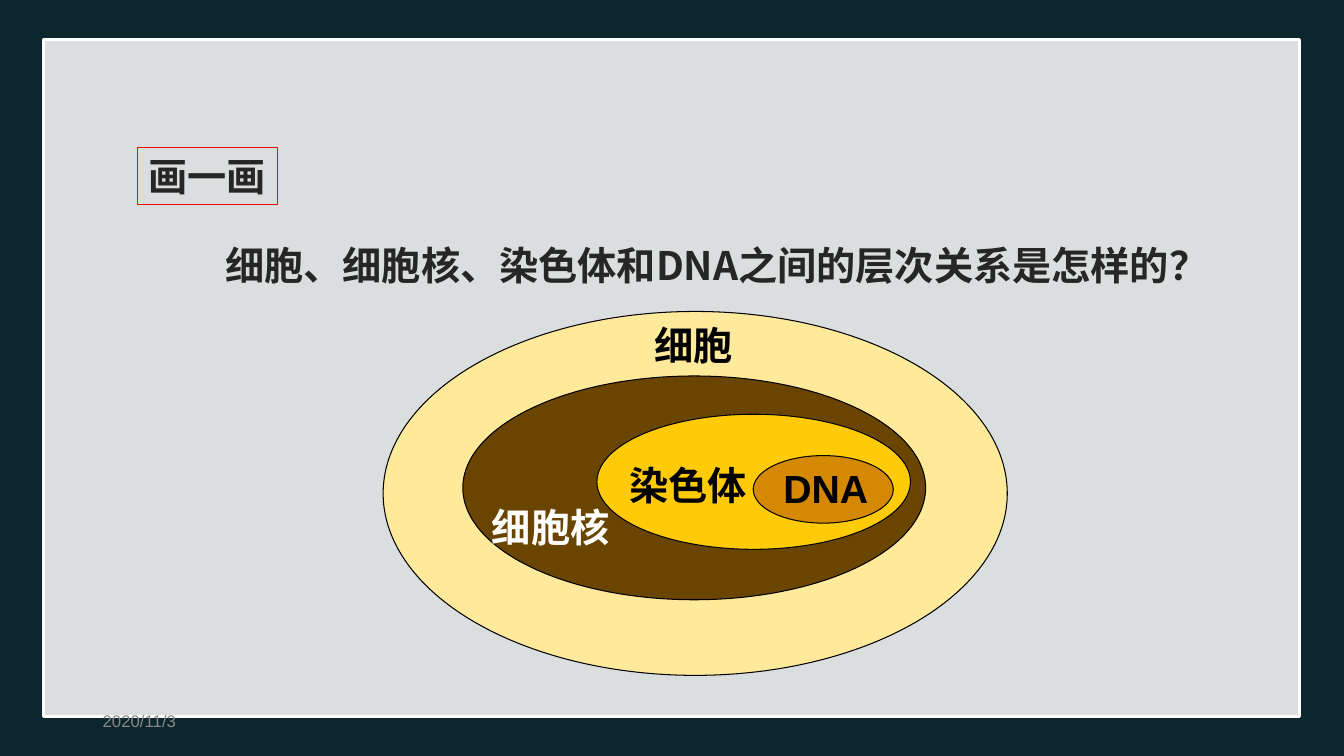
from dataclasses import dataclass

from lxml import etree
from pptx import Presentation
from pptx import util as u
from pptx.dml.color import RGBColor
from pptx.enum import shapes, text
from pptx.oxml.ns import qn

PX = 9144  # EMU in one px, 100 px to the inch

NAVY = RGBColor(0x0C, 0x26, 0x2D)
WHITE = RGBColor(0xFF, 0xFF, 0xFF)
BLACK = RGBColor(0x00, 0x00, 0x00)
RED = RGBColor(0xFF, 0x00, 0x00)
GREY = RGBColor(0x89, 0x89, 0x89)
CHARCOAL = RGBColor(0x26, 0x26, 0x26)
CREAM = RGBColor(0xFF, 0xEA, 0x9C)
BROWN = RGBColor(0x6A, 0x45, 0x00)
YELLOW = RGBColor(0xFF, 0xCA, 0x08)
ORANGE = RGBColor(0xD4, 0x89, 0x00)

LATIN_FONT = "Arial"
CHINESE_FONT = "Noto Sans CJK SC"


@dataclass(frozen=True)
class Box:
    left: int
    top: int
    width: int
    height: int

    def emu(self) -> tuple[int, int, int, int]:
        return (self.left * PX, self.top * PX, self.width * PX, self.height * PX)


@dataclass(frozen=True)
class Layer:
    """One level of the nested diagram: its ellipse and its label."""
    name: str
    ellipse: Box
    fill: RGBColor
    label: Box
    label_color: RGBColor = BLACK


LAYERS = [
    Layer("细胞", Box(380, 309, 619, 361), CREAM, Box(639, 314, 99, 57)),
    Layer("细胞核", Box(459, 373, 459, 222), BROWN, Box(478, 494, 139, 57), WHITE),
    Layer("染色体", Box(592, 411, 311, 134), YELLOW, Box(614, 453, 139, 57)),
    Layer("DNA", Box(747, 452, 139, 67), ORANGE, Box(767, 456, 105, 57)),
]


def add_figure(slide, kind, box: Box, fill: RGBColor, line: RGBColor, weight: float):
    shape = slide.shapes.add_shape(kind, *box.emu())
    shape.shadow.inherit = False
    shape.fill.solid()
    shape.fill.fore_color.rgb = fill
    shape.line.color.rgb = line
    shape.line.width = u.Pt(weight)
    return shape


def add_text(slide, content: str, box: Box, *, size: int = 28, bold: bool = True,
             color: RGBColor = BLACK, font: str = LATIN_FONT, wrap: bool = False,
             align=text.PP_ALIGN.LEFT, anchor=text.MSO_ANCHOR.TOP):
    shape = slide.shapes.add_textbox(*box.emu())
    frame = shape.text_frame
    frame.word_wrap = wrap
    frame.vertical_anchor = anchor
    paragraph = frame.paragraphs[0]
    paragraph.alignment = align
    run = paragraph.add_run()
    run.text = content
    run.font.size = u.Pt(size)
    run.font.bold = bold
    run.font.color.rgb = color
    run.font.name = font
    etree.SubElement(run.font._element, qn("a:ea"), typeface=CHINESE_FONT)
    return shape


def add_panel(slide) -> None:
    panel = add_figure(slide, shapes.MSO_SHAPE.RECTANGLE, Box(43, 39, 1246, 672),
                       WHITE, WHITE, 2)
    color = panel.fill._xPr.find(qn("a:solidFill"))[0]
    etree.SubElement(color, qn("a:alpha"), val="85000")


def main() -> None:
    presentation = Presentation()
    presentation.slide_width = 1333 * PX
    presentation.slide_height = 750 * PX
    slide = presentation.slides.add_slide(presentation.slide_layouts[6])
    slide.background.fill.solid()
    slide.background.fill.fore_color.rgb = NAVY

    # Panel and date
    add_panel(slide)
    add_text(slide, "2020/11/3", Box(92, 695, 300, 40), size=12, bold=False,
             color=GREY, wrap=True, anchor=text.MSO_ANCHOR.MIDDLE)

    # Framed heading and question
    heading = add_text(slide, "画一画", Box(136, 146, 139, 57), color=CHARCOAL,
                       font=CHINESE_FONT, align=text.PP_ALIGN.CENTER)
    heading.line.color.rgb = RED
    heading.line.width = u.Pt(0.75)
    add_text(slide, "细胞、细胞核、染色体和DNA之间的层次关系是怎样的？",
             Box(198, 234, 987, 57), color=CHARCOAL, font=CHINESE_FONT,
             align=text.PP_ALIGN.CENTER)

    # Nested ellipses, then their labels on top
    for layer in LAYERS:
        add_figure(slide, shapes.MSO_SHAPE.OVAL, layer.ellipse, layer.fill, BLACK, 0.75)
    for layer in LAYERS:
        add_text(slide, layer.name, layer.label, color=layer.label_color)

    presentation.save("out.pptx")


if __name__ == "__main__":
    main()
